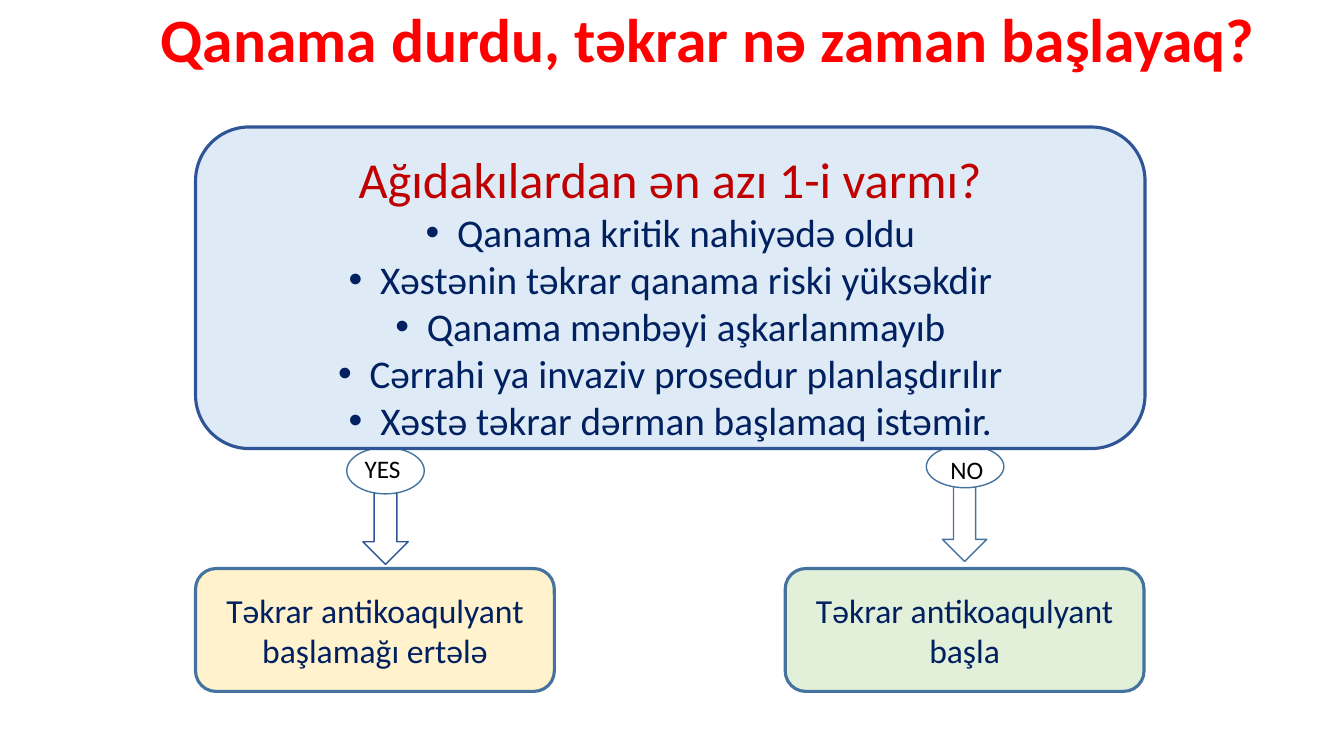
from pptx import Presentation
from pptx.dml.color import RGBColor
from pptx.enum.shapes import MSO_SHAPE as Kind
from pptx.enum.text import MSO_ANCHOR as Anchor, PP_ALIGN as Align
from pptx.oxml.ns import qn
from pptx.util import Pt
from lxml.etree import SubElement

NAVY, BLUE, STEEL = "002060", "2F5597", "43739E"

deck = Presentation()
deck.slide_width, deck.slide_height = Pt(960), Pt(540)
slide = deck.slides.add_slide(deck.slide_layouts[6])


def draw(kind, box, fill, line, width):
    shape = slide.shapes.add_shape(kind, *map(Pt, box))
    shape.shadow.inherit = False
    shape.fill.solid()
    shape.fill.fore_color.rgb = RGBColor.from_string(fill)
    shape.line.color.rgb = RGBColor.from_string(line)
    shape.line.width = Pt(width)
    return shape


def style(par, size, color, align=Align.CENTER, bold=False):
    par.alignment = align
    for run in par.runs:
        run.font.name = "Calibri"
        run.font.size = Pt(size)
        run.font.bold = bold
        run.font.color.rgb = RGBColor.from_string(color)


# Title
title = slide.shapes.add_textbox(Pt(87.8), Pt(2.9), Pt(828), Pt(104.4))
frame = title.text_frame
frame.word_wrap = True
frame.margin_left = Pt(27)
frame.text = "Qanama durdu, təkrar nə zaman başlayaq?"
frame.paragraphs[0].line_spacing = 0.9
style(frame.paragraphs[0], 44, "FF0000", Align.LEFT, True)

# Outcomes
for left, fill, text in [
    (139.7, "FFF2CC", "Təkrar antikoaqulyant başlamağı ertələ"),
    (560.9, "E2F0D9", "Təkrar antikoaqulyant başla"),
]:
    box = (left, 406.1, 256.3, 87.8)
    frame = draw(Kind.ROUNDED_RECTANGLE, box, fill, STEEL, 2.25).text_frame
    frame.word_wrap = True
    frame.vertical_anchor = Anchor.MIDDLE
    frame.text = text
    style(frame.paragraphs[0], 24, NAVY)

# Branches: arrow, oval and label
for arrow, edge, oval, text, label, inset in [
    ((259.2, 334.1, 32.4, 69.1), BLUE, (247.7, 319.7, 55.4, 33.1),
     "YES", (253.4, 320.4, 55.4, 29), 7.2),
    ((673.2, 334.1, 31.7, 67), STEEL, (661.7, 318.2, 55.4, 30.2),
     "NO", (659.5, 321.1, 54.7, 29), 19.4),
]:
    draw(Kind.DOWN_ARROW, arrow, "FFFFFF", edge, 1)
    draw(Kind.OVAL, oval, "FFFFFF", STEEL, 1)
    frame = slide.shapes.add_textbox(*map(Pt, label)).text_frame
    frame.word_wrap = True
    frame.margin_left = Pt(inset)
    frame.text = text
    style(frame.paragraphs[0], 18, "000000", Align.LEFT)

# Question with its criteria
card = draw(Kind.ROUNDED_RECTANGLE, (139.7, 90.7, 678.2, 229.7),
            "DEEBF7", BLUE, 2.25)
frame = card.text_frame
frame.word_wrap = True
frame.vertical_anchor = Anchor.TOP
frame.text = "Ağıdakılardan ən azı 1-i varmı?"
style(frame.paragraphs[0], 36, "C00000")
for text in [
    "Qanama kritik nahiyədə oldu",
    "Xəstənin təkrar qanama riski yüksəkdir",
    "Qanama mənbəyi aşkarlanmayıb",
    "Cərrahi ya invaziv prosedur planlaşdırılır",
    "Xəstə təkrar dərman başlamaq istəmir.",
]:
    par = frame.add_paragraph()
    par.text = text
    style(par, 28, NAVY)
    props = par._p.get_or_add_pPr()
    props.set("marL", str(Pt(22.5)))
    props.set("indent", str(-Pt(22.5)))
    SubElement(props, qn("a:buFont"), typeface="Arial")
    SubElement(props, qn("a:buChar"), char="•")

deck.save("out.pptx")
